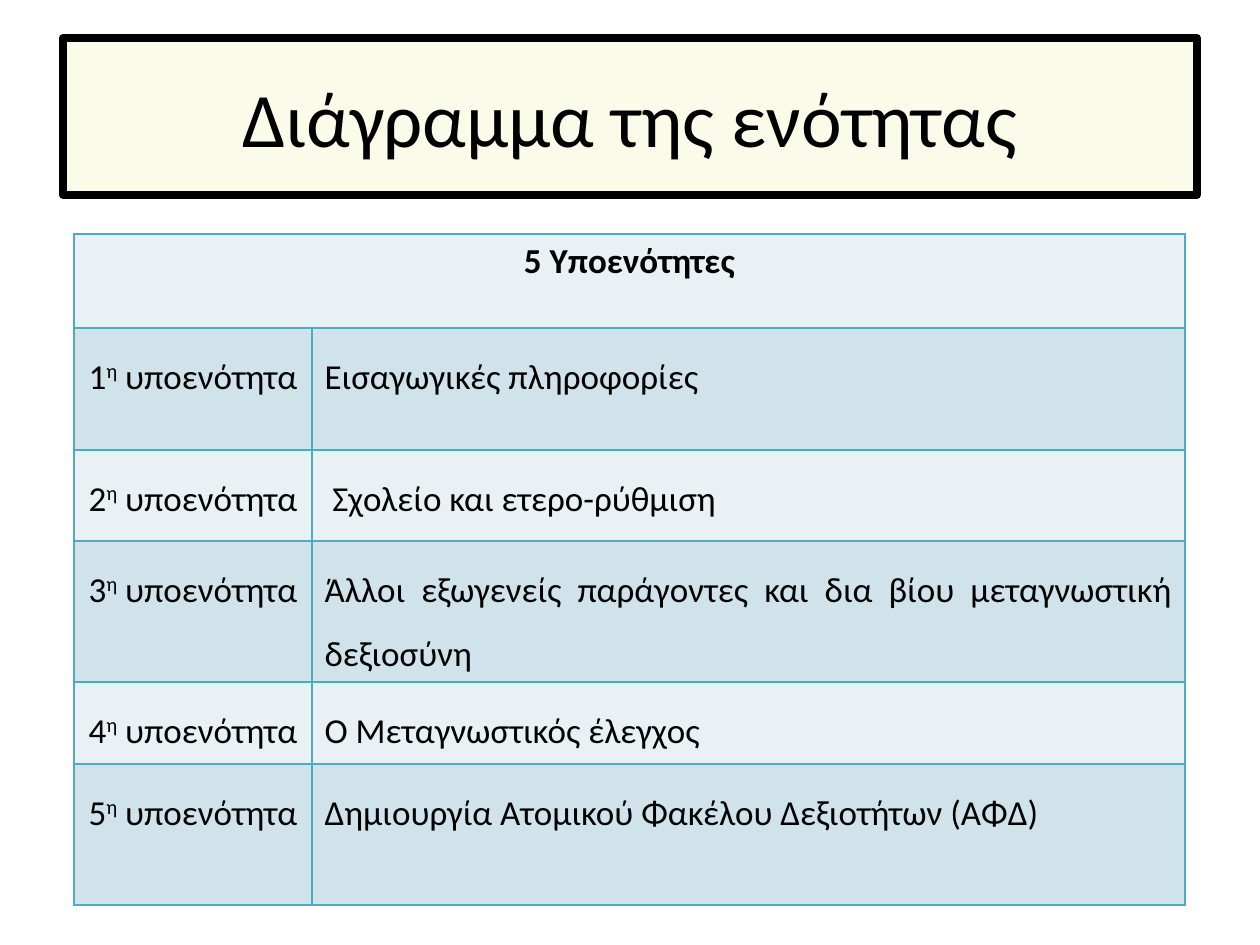
import pptx
import pptx.dml.color
import pptx.enum.text
import pptx.oxml
import pptx.oxml.ns
import pptx.util

# Content
TITLE = "Διάγραμμα της ενότητας"
HEADING = "5 Υποενότητες"
SUBUNITS = [
    "Εισαγωγικές πληροφορίες",
    " Σχολείο και ετερο-ρύθμιση",
    "Άλλοι εξωγενείς παράγοντες και δια βίου μεταγνωστική δεξιοσύνη",
    "Ο Μεταγνωστικός έλεγχος",
    "Δημιουργία Ατομικού Φακέλου Δεξιοτήτων (ΑΦΔ)",
]

# Layout in px, 126 to the inch
SCALE = 914400 // 126
TITLE_BOX = (63, 38, 1134, 157)
TABLE_LEFT, TABLE_TOP = 74, 234
COLUMN_WIDTHS = [238, 873]
ROW_HEIGHTS = [94, 122, 91, 141, 82, 141]

BLACK, CREAM, BORDER = "000000", "FBFBE9", "4BACC6"
BANDS = ["E9F1F5", "D0E3EA"]
ALIGN = pptx.enum.text.PP_ALIGN


def px(length):
    return pptx.util.Emu(length * SCALE)


def colour(value):
    return pptx.dml.color.RGBColor.from_string(value)


def paint(fill, value):
    fill.solid()
    fill.fore_color.rgb = colour(value)


def write(para, text, size=20, bold=False, raised=False, align=ALIGN.CENTER, spacing=None):
    para.alignment = align
    if spacing:
        para.line_spacing = spacing
    span = para.add_run()
    span.text = text
    span.font.name = "Calibri"
    span.font.size = pptx.util.Pt(size)
    span.font.bold = bold
    span.font.color.rgb = colour(BLACK)
    if raised:
        span.font._element.set("baseline", "30000")


def add_borders(cell):
    properties = cell._tc.get_or_add_tcPr()
    for index, side in enumerate(("lnL", "lnR", "lnT", "lnB")):
        properties.insert(index, pptx.oxml.parse_xml(
            f'<a:{side} {pptx.oxml.ns.nsdecls("a")} w="12700"><a:solidFill>'
            f'<a:srgbClr val="{BORDER}"/></a:solidFill></a:{side}>'))


deck = pptx.Presentation()
deck.slide_width, deck.slide_height = px(1260), px(945)
page = deck.slides.add_slide(deck.slide_layouts[5])

# Title
title = page.shapes.title
title.left, title.top, title.width, title.height = map(px, TITLE_BOX)
paint(title.fill, CREAM)
paint(title.line.fill, BLACK)
title.line.width = pptx.util.Pt(4.5)
title.text_frame.vertical_anchor = pptx.enum.text.MSO_ANCHOR.MIDDLE
write(title.text_frame.paragraphs[0], TITLE, size=44)

# Table grid
table = page.shapes.add_table(
    len(ROW_HEIGHTS), len(COLUMN_WIDTHS), px(TABLE_LEFT), px(TABLE_TOP),
    px(sum(COLUMN_WIDTHS)), px(sum(ROW_HEIGHTS))).table
for column, width in zip(table.columns, COLUMN_WIDTHS):
    column.width = px(width)
for number, (row, height) in enumerate(zip(table.rows, ROW_HEIGHTS)):
    row.height = px(height)
    for cell in row.cells:
        paint(cell.fill, BANDS[number % 2])
        add_borders(cell)

# Table text
table.cell(0, 0).merge(table.cell(0, 1))
write(table.cell(0, 0).text_frame.paragraphs[0], HEADING, bold=True)
for number, subject in enumerate(SUBUNITS, start=1):
    label, description = (cell.text_frame.paragraphs[0] for cell in table.rows[number].cells)
    write(label, str(number), spacing=1.5)
    write(label, "η", raised=True, spacing=1.5)
    write(label, " υποενότητα", spacing=1.5)
    write(description, subject, align=ALIGN.JUSTIFY, spacing=1.5)

deck.save("out.pptx")
